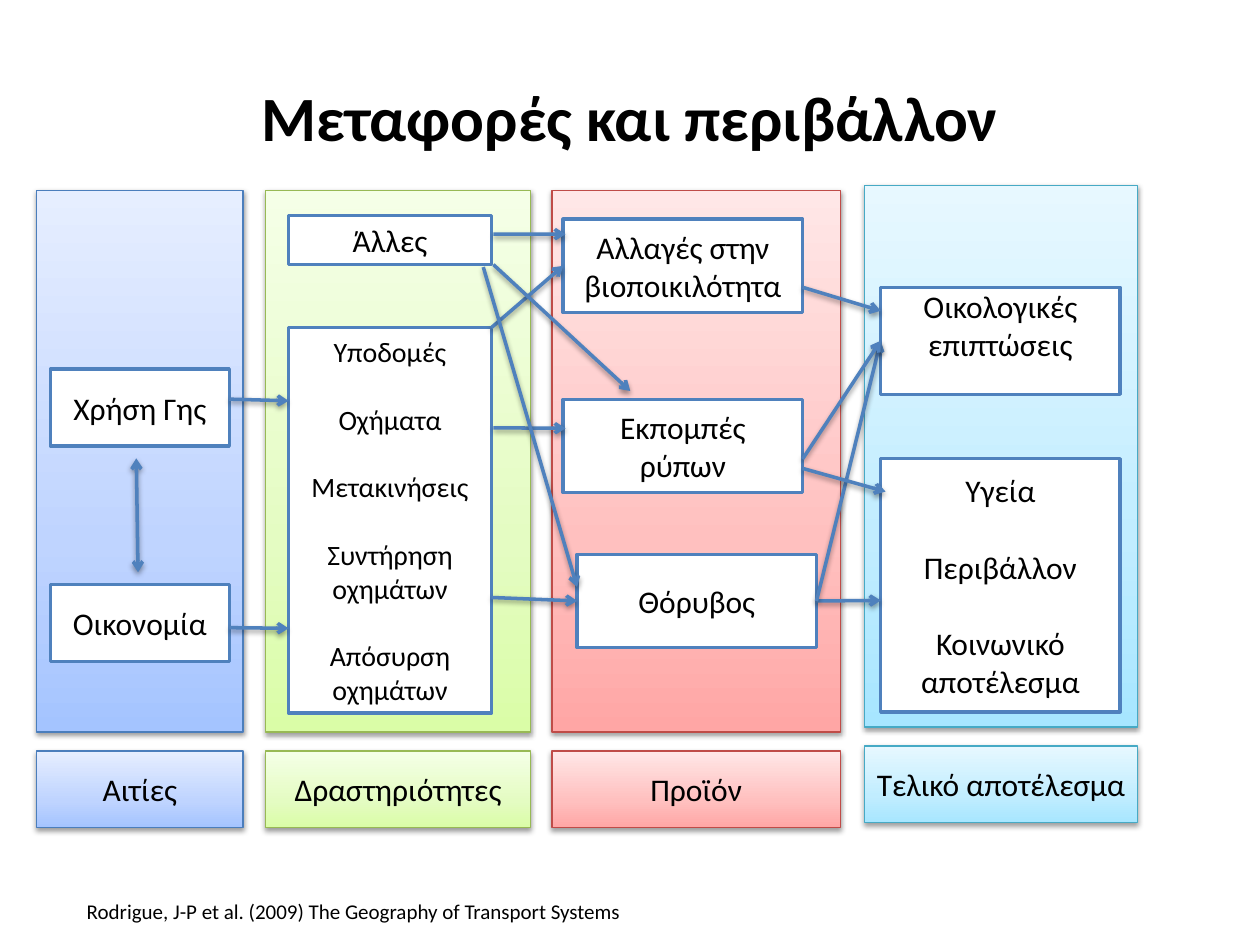
from copy import deepcopy

from lxml import etree
from pptx import Presentation
from pptx.dml.color import RGBColor
from pptx.enum.shapes import MSO_CONNECTOR, MSO_SHAPE
from pptx.enum.text import MSO_ANCHOR, PP_ALIGN
from pptx.oxml.ns import qn
from pptx.util import Inches, Pt

RECT = MSO_SHAPE.RECTANGLE
LINE = MSO_CONNECTOR.STRAIGHT
MID, TOP = MSO_ANCHOR.MIDDLE, MSO_ANCHOR.TOP
LEFT, MIDST = PP_ALIGN.LEFT, PP_ALIGN.CENTER

WIDE, HIGH = Inches(10), Inches(7.5)
CELL = WIDE / 100
FONT = "Calibri"
INK = {"text": "000000", "card": "FFFFFF", "edge": "4F81BD"}
HUES = {
    "blue": {"edge": "4B7EBC", "stops": ("A4C4FF", "BFD4FF", "E6EEFF")},
    "green": {"edge": "98B955", "stops": ("DAFDA7", "E4FCC2", "F5FFE7")},
    "red": {"edge": "BF4C48", "stops": ("FFA6A5", "FFC0BF", "FFE7E7")},
    "cyan": {"edge": "46AAC5", "stops": ("A7E6FF", "C1EDFF", "E7F8FF")},
}
STOPS = (0, 0.35, 1)
SITES = {(0, 0.5): 1, (1, 0.5): 3}

LANES = [
    ((2.9, 15.1, 16.4, 43), "blue", "Αιτίες", {
        "land": ((1.1, 14.2, 14.2, 6.1), "Χρήση Γης", {}),
        "trade": ((1.1, 31.3, 14.2, 6.1), "Οικονομία", {}),
    }),
    ((21.1, 15.1, 21, 43), "green", "Δραστηριότητες", {
        "other": ((1.8, 2, 16.1, 3.9), "Άλλες", {}),
        "works": ((1.8, 10.9, 16.1, 30.6),
                  "Υποδομές\nΟχήματα\nΜετακινήσεις\nΣυντήρηση οχημάτων\nΑπόσυρση οχημάτων",
                  {"size": 16, "gap": 19.5}),
    }),
    ((43.8, 15.1, 22.9, 43), "red", "Προϊόν", {
        "life": ((0.9, 2.3, 19, 7.4), "Αλλαγές στην βιοποικιλότητα", {}),
        "fumes": ((0.9, 16.6, 19, 7.4), "Εκπομπές ρύπων", {}),
        "noise": ((2, 28.9, 19, 7.4), "Θόρυβος", {}),
    }),
    ((68.6, 14.7, 21.7, 43), "cyan", "Τελικό αποτέλεσμα", {
        "health": ((1.3, 21.7, 19, 20.1), "Υγεία\nΠεριβάλλον\nΚοινωνικό αποτέλεσμα",
                   {"gap": 22}),
        "green": ((1.3, 8.1, 19, 8.5), "Οικολογικές επιπτώσεις",
                  {"anchor": TOP, "inset": 0}),
    }),
]

ARROWS = [
    ("noise", (1, 0.5), "health", (0, 0.56)),
    ("noise", (1, 0.5), "green", (0, 0.5)),
    ("life", (1, 0.73), "green", (0, 0.22)),
    ("fumes", (1, 0.74), "health", (0.02, 0.13)),
    ("land", (0.48, 1.16), "trade", (0.49, -0.16), True),
    ("land", (1, 0.39), "works", (0, 0.19)),
    ("trade", (1, 0.56), "works", (0, 0.78)),
    ("works", (1.01, 0.26), "fumes", (0.01, 0.31)),
    ("works", (1, 0.7), "noise", (0, 0.5)),
    ("works", (1, 0), "life", (0, 0.5)),
    ("other", (1.01, 0.38), "life", (0.01, 0.16)),
    ("other", (1.01, 1), "fumes", (0.28, -0.09)),
    ("other", (0.96, 1.05), "noise", (0, 0.35)),
    ("fumes", (1, 0.64), "green", (0, 0.5)),
]


def tint(code):
    """Turn a hex string into a colour."""
    return RGBColor.from_string(code)


def grid(box):
    """Turn a box in grid cells into slide lengths."""
    return [round(n * CELL) for n in box]


def write(frame, text, size=18, bold=False, align=MIDST, anchor=MID, gap=0, inset=0.05):
    """Fill a text frame, one paragraph a line."""
    frame.word_wrap = True
    frame.vertical_anchor = anchor
    frame.margin_top = Inches(inset)
    frame.text = text
    for i, para in enumerate(frame.paragraphs):
        para.alignment = align
        para.space_before = Pt(gap if i else 0)
        font = para.runs[0].font
        font.name, font.size, font.bold = FONT, Pt(size), bold
        font.color.rgb = tint(INK["text"])


def shade(props):
    """Add a soft shadow that falls straight down."""
    effects = etree.SubElement(props, qn("a:effectLst"))
    outer = etree.SubElement(effects, qn("a:outerShdw"), blurRad=str(Pt(3.1)),
                             dist=str(Pt(1.6)), dir="5400000", rotWithShape="0")
    color = etree.SubElement(outer, qn("a:srgbClr"), val=INK["text"])
    etree.SubElement(color, qn("a:alpha"), val="38000")


def panel(slide, box, hue):
    """Draw a shaded rectangle with a three-stop blend."""
    shape = slide.shapes.add_shape(RECT, *grid(box))
    fill = shape.fill
    fill.gradient()
    fill.gradient_angle = 90
    props = shape._element.spPr
    first = props.find(".//" + qn("a:gs"))
    first.addnext(deepcopy(first))
    for stop, place, code in zip(fill.gradient_stops, STOPS, HUES[hue]["stops"]):
        stop.position = place
        stop.color.rgb = tint(code)
    shape.line.color.rgb = tint(HUES[hue]["edge"])
    shape.line.width = Pt(0.75)
    shade(props)
    return shape


def card(slide, box, text, **form):
    """Draw a white box with a blue edge and its text."""
    shape = slide.shapes.add_shape(RECT, *grid(box))
    shape.shadow.inherit = False
    shape.fill.solid()
    shape.fill.fore_color.rgb = tint(INK["card"])
    shape.line.color.rgb = tint(INK["edge"])
    shape.line.width = Pt(2)
    write(shape.text_frame, text, **form)
    return shape


def lane(slide, box, hue, label, items):
    """Draw a column with its label below and return its cards."""
    left, top, width, height = box
    panel(slide, box, hue)
    foot = panel(slide, (left, top + height + 1.5, width, 6.1), hue)
    write(foot.text_frame, label)
    return {name: card(slide, (left + x, top + y, w, h), text, **form)
            for name, ((x, y, w, h), text, form) in items.items()}


def spot(shape, share):
    """Find a point given as shares of a shape's size."""
    return (round(shape.left + share[0] * shape.width),
            round(shape.top + share[1] * shape.height))


def arrow(slide, cards, start, out, end, into, both=False):
    """Link two cards, joined wherever an end meets a side's middle."""
    a, b = cards[start], cards[end]
    link = slide.shapes.add_connector(LINE, *spot(a, out), *spot(b, into))
    if out in SITES:
        link.begin_connect(a, SITES[out])
    if into in SITES:
        link.end_connect(b, SITES[into])
    link.line.color.rgb = tint(INK["edge"])
    link.line.width = Pt(2)
    props = link._element.spPr
    for tag in ("a:headEnd", "a:tailEnd") if both else ("a:tailEnd",):
        etree.SubElement(props.find(qn("a:ln")), qn(tag), type="arrow")
    shade(props)


def head(slide, box, text):
    """Place the slide title."""
    title = slide.shapes.title
    title.left, title.top, title.width, title.height = grid(box)
    write(title.text_frame, text, size=36, bold=True)


def cite(slide, box, text):
    """Place the source line."""
    note = slide.shapes.add_textbox(*grid(box))
    write(note.text_frame, text, size=12, align=LEFT, anchor=TOP)


def main():
    """Build the slide and save it."""
    deck = Presentation()
    deck.slide_width, deck.slide_height = WIDE, HIGH
    slide = deck.slides.add_slide(deck.slide_layouts[5])
    head(slide, (5, 3, 90, 12.5), "Μεταφορές και περιβάλλον")
    cards = {}
    for part in LANES:
        cards.update(lane(slide, *part))
    for ends in ARROWS:
        arrow(slide, cards, *ends)
    cite(slide, (5.9, 70.8, 50, 3),
         "Rodrigue, J-P et al. (2009) The Geography of Transport Systems")
    deck.save("out.pptx")


if __name__ == "__main__":
    main()
